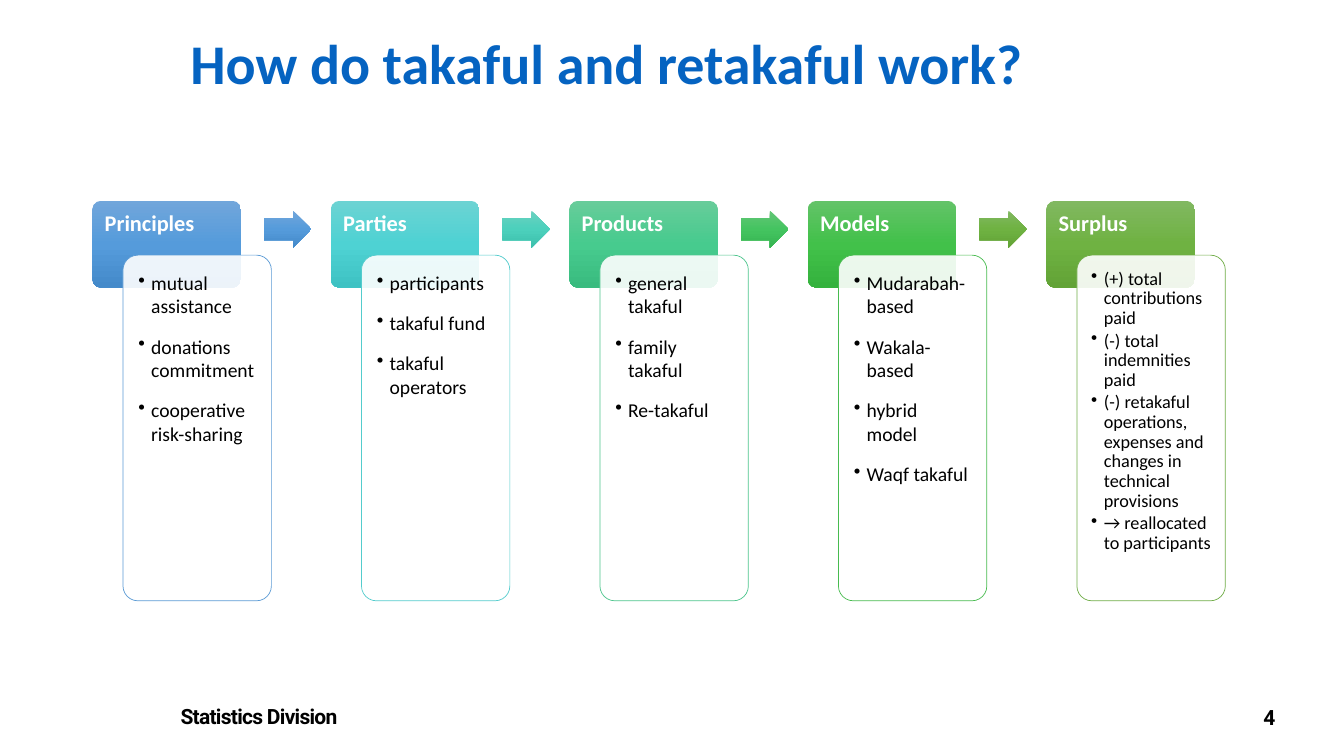
import copy

import pptx
import pptx.util
from lxml import etree
from pptx.dml.color import RGBColor
from pptx.enum.shapes import MSO_SHAPE
from pptx.enum.text import PP_ALIGN
from pptx.oxml.ns import qn
from pptx.util import Cm, Pt

COLORS = {
    "white": "FFFFFF",
    "black": "000000",
    "title": "0563C1",
    "blue": "5B9BD5",
    "aqua": "54CCCD",
    "mint": "4DC58D",
    "green": "48BB4F",
    "olive": "70AD47",
}
FADES = {
    "blue": ("71A6DB", "559BDB", "448ACA"),
    "aqua": ("6CD3D3", "4ED2D3", "3EC2C3"),
    "teal": ("6AD1C0", "4CD0BC", "3CC0AC"),
    "mint": ("67CC9A", "47CB8E", "39BB7F"),
    "leaf": ("64C677", "44C460", "36B552"),
    "green": ("63C368", "42C14A", "34B23D"),
    "olive": ("81B861", "6FB242", "62A336"),
}
STEPS = [
    ("Principles", "blue", "blue",
     ["mutual assistance", "donations commitment", "cooperative risk-sharing"]),
    ("Parties", "aqua", "teal",
     ["participants", "takaful fund", "takaful operators"]),
    ("Products", "mint", "leaf",
     ["general takaful", "family takaful", "Re-takaful"]),
    ("Models", "green", "olive",
     ["Mudarabah-based", "Wakala-based", "hybrid model", "Waqf takaful"]),
    ("Surplus", "olive", None,
     ["(+) total contributions paid", "(-) total indemnities paid",
      "(-) retakaful operations, expenses and changes in technical provisions",
      "→ reallocated to participants"]),
]
LEFT, PITCH = 2.33, 6.01


def rgb(name):
    return RGBColor.from_string(COLORS[name])


def add_box(slide, kind, place, *adjust):
    shape = slide.shapes.add_shape(kind, *map(Cm, place))
    shape.shadow.inherit = False
    shape.line.fill.background()
    for index, value in enumerate(adjust):
        shape.adjustments[index] = value
    return shape


def fade(shape, name):
    fill = shape.fill
    fill.gradient()
    fill.gradient_angle = 270
    stops = shape._element.spPr.find(".//" + qn("a:gsLst"))
    stops.insert(1, copy.deepcopy(stops[0]))
    for index, stop in enumerate(fill.gradient_stops):
        stop.position = index / 2
        stop.color.rgb = RGBColor.from_string(FADES[name][index])


def add_panel(slide, place, color):
    shape = add_box(slide, MSO_SHAPE.ROUNDED_RECTANGLE, place, 0.1)
    shape.fill.solid()
    shape.fill.fore_color.rgb = rgb("white")
    tone = shape._element.spPr.find(qn("a:solidFill")).find(qn("a:srgbClr"))
    etree.SubElement(tone, qn("a:alpha"), val="90000")
    shape.line.color.rgb = rgb(color)
    shape.line.width = Pt(0.5)


def set_font(para, size, color, bold=False, face="Calibri"):
    font = para.font
    font.name, font.size, font.bold = face, Pt(size), bold
    font.color.rgb = rgb(color)


def add_text(slide, place, lines, pads=(0.25, 0.13, 0.25, 0.13)):
    frame = slide.shapes.add_textbox(*map(Cm, place)).text_frame
    frame.word_wrap = True
    (frame.margin_left, frame.margin_top,
     frame.margin_right, frame.margin_bottom) = map(Cm, pads)
    frame.text = "\n".join(lines)
    return frame.paragraphs


def add_list(slide, place, items, size, pad, gap, lead):
    for para in add_text(slide, place, items, [pad] * 4):
        para.space_after = Pt(gap)
        para.line_spacing = lead
        props = para._p.get_or_add_pPr()
        props.set("marL", str(Cm(0.32)))
        props.set("indent", str(-Cm(0.32)))
        etree.SubElement(props, qn("a:buChar"), char="•")
        set_font(para, size, "black")


def add_step(slide, left, step):
    label, color, arrow, items = step
    head = add_box(slide, MSO_SHAPE.ROUNDED_RECTANGLE,
                   (left, 5.06, 3.74, 2.19), 0.1)
    fade(head, color)
    para = add_text(slide, (left, 5.06, 3.74, 1.47), [label],
                    (0.31, 0.3, 0.31, 0.17))[0]
    para.line_spacing = 0.9
    set_font(para, 16, "white", True)
    add_panel(slide, (left + 0.77, 6.43, 3.74, 8.71), color)
    style = (14, 0.28, 12, 1.0) if arrow else (13, 0.25, 2, 0.9)
    add_list(slide, (left + 0.88, 6.54, 3.53, 8.48), items, *style)
    if arrow:
        shape = add_box(slide, MSO_SHAPE.RIGHT_ARROW,
                        (left + 4.32, 5.31, 1.2, 0.93), 0.6, 0.5)
        fade(shape, arrow)


def add_foot(slide, place, text, align):
    para = add_text(slide, place, [text])[0]
    para.alignment = align
    set_font(para, 15, "black", True, "Roboto")
    para.runs[0]._r.get_or_add_rPr().set("spc", "-50")


def main():
    deck = pptx.Presentation()
    deck.slide_width, deck.slide_height = Cm(33.87), Cm(19.05)
    slide = deck.slides.add_slide(deck.slide_layouts[6])
    add_foot(slide, (4.3, 17.6, 14.83, 0.89), "Statistics Division",
             PP_ALIGN.LEFT)
    add_foot(slide, (27.56, 17.63, 4.83, 0.89), "4", PP_ALIGN.RIGHT)
    for index, step in enumerate(STEPS):
        add_step(slide, LEFT + index * PITCH, step)
    title = add_text(slide, (4.22, 0.58, 22.12, 1.96),
                     ["How do takaful and retakaful work?"])[0]
    title.alignment = PP_ALIGN.CENTER
    set_font(title, 40, "title", True)
    deck.save("out.pptx")


if __name__ == "__main__":
    main()
